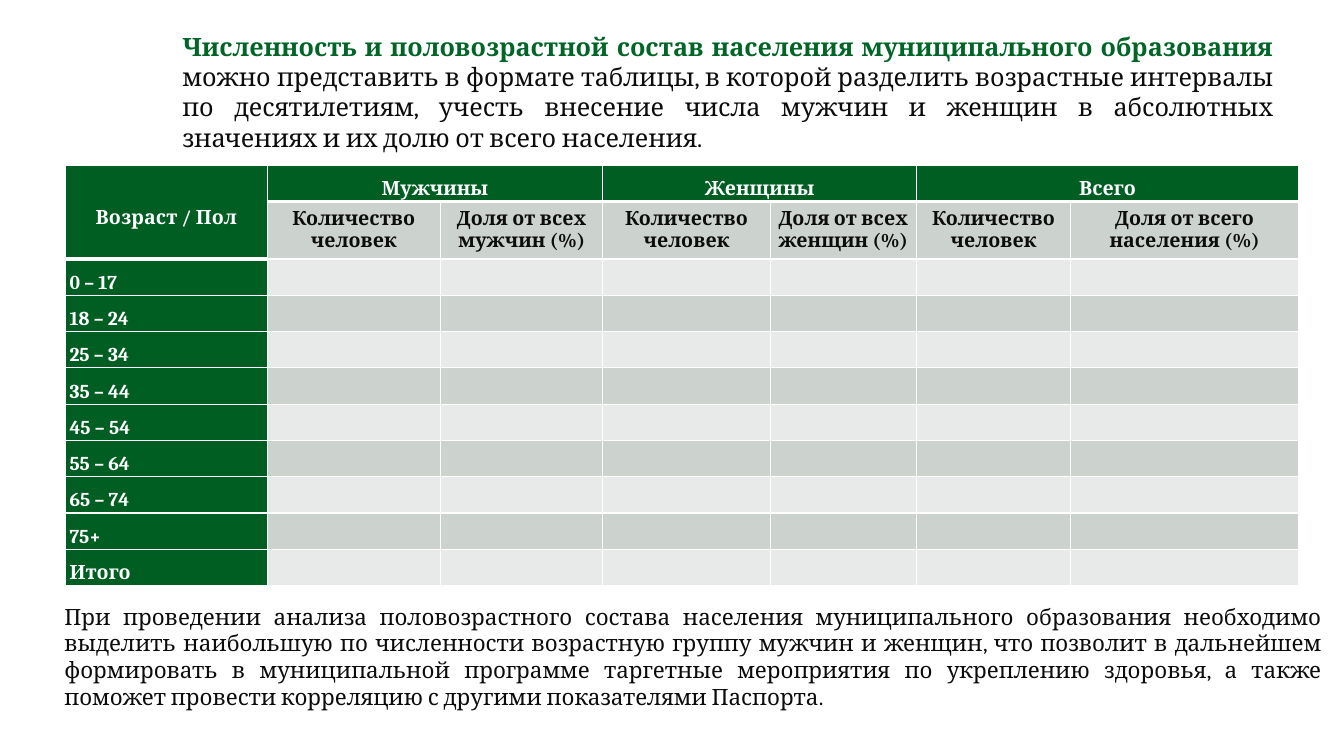
from lxml import etree
from pptx import Presentation
from pptx import util as u
from pptx.dml.color import RGBColor
from pptx.enum import text
from pptx.oxml import ns

PX = 9144
FONT = "Cambria"
HUE = {"head": "005E23", "title": "006526", "ink": "0C0C0C",
       "white": "FFFFFF", "dark": "CCD2CD", "light": "E7EAE8"}
COLS = [200, 172, 161, 166, 145, 153, 226]
ROWS = [36, 57] + [36] * 9
GROUPS = ["Мужчины", "Женщины", "Всего"]
SHARES = ["Доля от всех мужчин (%)", "Доля от всех женщин (%)",
          "Доля от всего населения (%)"]
AGES = ["0 – 17", "18 – 24", "25 – 34", "35 – 44", "45 – 54",
        "55 – 64", "65 – 74", "75+", "Итого"]
LEAD = "Численность и половозрастной состав населения муниципального образования "
INTRO = ("можно представить в формате таблицы, в которой разделить возрастные "
         "интервалы по десятилетиям, учесть внесение числа мужчин и женщин в "
         "абсолютных значениях и их долю от всего населения.")
NOTE = ("При проведении анализа половозрастного состава населения муниципального "
        "образования необходимо выделить наибольшую по численности возрастную "
        "группу мужчин и женщин, что позволит в дальнейшем формировать в "
        "муниципальной программе таргетные мероприятия по укреплению здоровья, "
        "а также поможет провести корреляцию с другими показателями Паспорта.")


def style(font, size, hue, bold=False):
    """Set the face, size, colour and weight of a font."""
    font.name, font.size, font.bold = FONT, u.Pt(size), bold
    font.color.rgb = RGBColor.from_string(HUE[hue])


def add_text(slide, box, size, after, runs):
    """Add a justified paragraph made of (words, colour, bold) runs."""
    frame = slide.shapes.add_textbox(*[v * PX for v in box]).text_frame
    frame.word_wrap = True
    frame.auto_size = text.MSO_AUTO_SIZE.SHAPE_TO_FIT_TEXT
    para = frame.paragraphs[0]
    para.alignment = text.PP_ALIGN.JUSTIFY
    para.space_after = u.Pt(after)
    for words, hue, bold in runs:
        run = para.add_run()
        run.text = words
        style(run.font, size, hue, bold)


def add_edge(cell, side, width):
    """Draw a white line on one side of a cell."""
    props = cell._tc.get_or_add_tcPr()
    line = etree.SubElement(props, ns.qn("a:ln" + side), w=str(u.Pt(width)))
    fill = etree.SubElement(line, ns.qn("a:solidFill"))
    etree.SubElement(fill, ns.qn("a:srgbClr"), val=HUE["white"])


def fill_cell(cell, row, col, words):
    """Write and format one cell by its place in the grid."""
    green = row == 0 or col == 0
    thick = row == 0 or (row == 1 and col == 0)
    cell.text = words
    cell.margin_left = cell.margin_right = 4 * PX
    cell.margin_top = cell.margin_bottom = 0
    cell.vertical_anchor = text.MSO_ANCHOR.MIDDLE
    for para in cell.text_frame.paragraphs:
        if row < 2:
            para.alignment = text.PP_ALIGN.CENTER
        if green:
            para.line_spacing = 1.5
        style(para.font, 14, "white" if green else "ink", True)
    add_edge(cell, "L", 1)
    add_edge(cell, "R", 1)
    if row == 0:
        add_edge(cell, "T", 1)
    add_edge(cell, "B", 3 if thick else 1)
    cell.fill.solid()
    hue = "head" if green else "dark" if row % 2 else "light"
    cell.fill.fore_color.rgb = RGBColor.from_string(HUE[hue])


def add_grid(slide, left, top):
    """Add the table of ages by sex."""
    heads = ["Возраст / Пол"]
    subs = [""]
    for group, share in zip(GROUPS, SHARES):
        heads += [group, ""]
        subs += ["Количество\nчеловек", share]
    data = [heads, subs] + [[age] + [""] * 6 for age in AGES]
    size = [left, top, sum(COLS), sum(ROWS)]
    table = slide.shapes.add_table(len(ROWS), len(COLS),
                                   *[v * PX for v in size]).table
    for col, width in zip(table.columns, COLS):
        col.width = width * PX
    for row, height in zip(table.rows, ROWS):
        row.height = height * PX
    for row, line in enumerate(data):
        for col, words in enumerate(line):
            fill_cell(table.cell(row, col), row, col, words)
    table.cell(0, 0).merge(table.cell(1, 0))
    for col in range(1, len(COLS), 2):
        table.cell(0, col).merge(table.cell(0, col + 1))


def main():
    """Build the slide and save it."""
    deck = Presentation()
    deck.slide_width, deck.slide_height = 1333 * PX, 750 * PX
    slide = deck.slides.add_slide(deck.slide_layouts[6])
    add_text(slide, (171, 26, 1102, 131), 18, 8,
             [(LEAD, "title", True), (INTRO, "ink", False)])
    add_grid(slide, 65, 164)
    add_text(slide, (54, 593, 1268, 118), 16, 10, [(NOTE, "ink", False)])
    deck.save("out.pptx")


if __name__ == "__main__":
    main()
